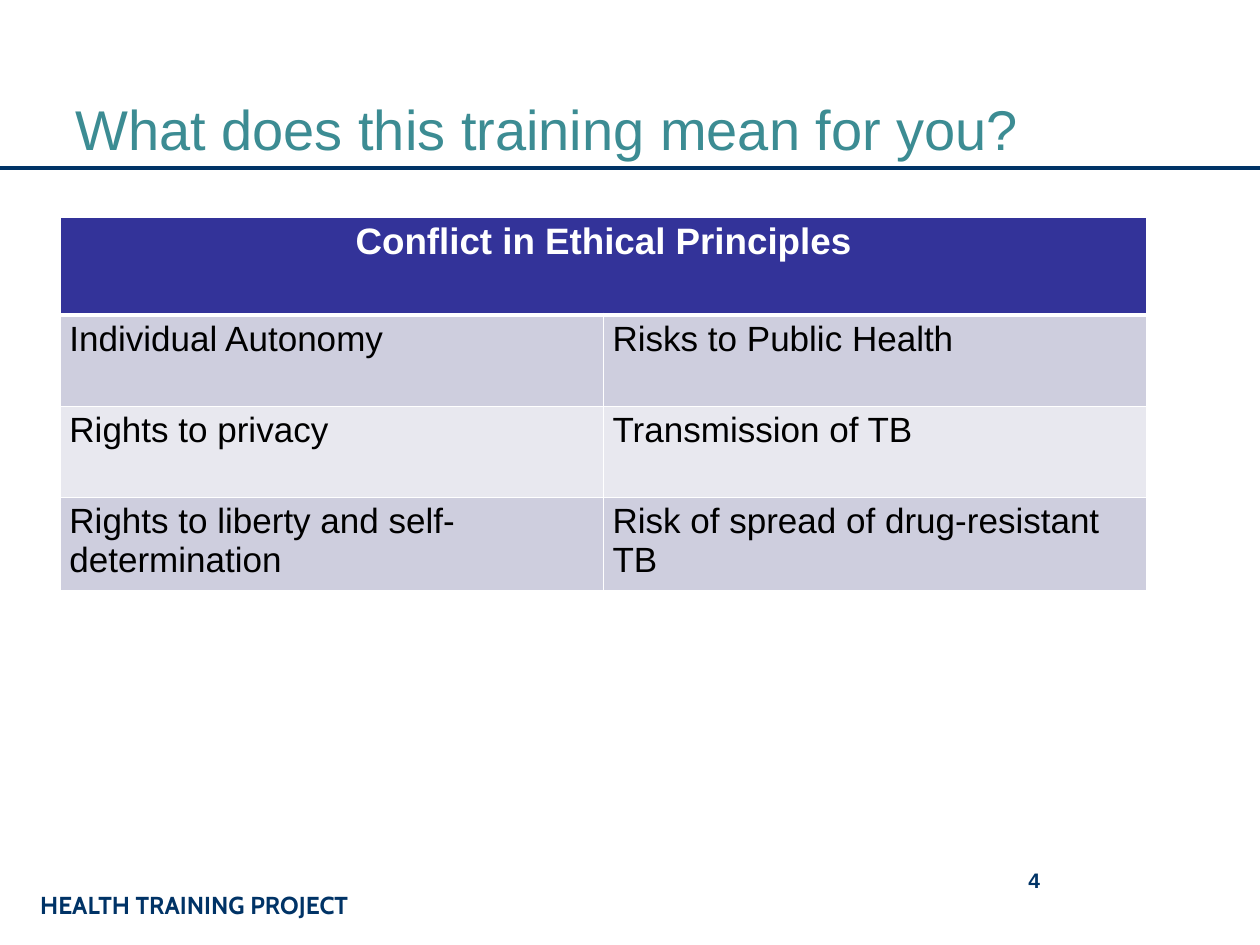
import pptx
import pptx.dml.color
import pptx.enum.shapes
import pptx.enum.text
import pptx.oxml
import pptx.oxml.ns
import pptx.util
from lxml import etree

Cm = pptx.util.Cm
Pt = pptx.util.Pt
Align = pptx.enum.text.PP_ALIGN
Anchor = pptx.enum.text.MSO_ANCHOR

NAVY = "003366"
TEAL = "3C8C93"
INDIGO = "333399"
BANDS = ("CECEDE", "E8E8EF")
WHITE = "FFFFFF"
BLACK = "000000"


def color(code):
    return pptx.dml.color.RGBColor.from_string(code)


def write(frame, text, size=20, font="Arial", tint=BLACK, bold=False,
          align=Align.LEFT):
    para = frame.paragraphs[0]
    para.alignment = align
    run = para.add_run()
    run.text = text
    run.font.size = Pt(size)
    run.font.name = font
    run.font.bold = bold
    run.font.color.rgb = color(tint)


def border(cell, base):
    props = cell._tc.get_or_add_tcPr()
    for side, width in (("L", 1), ("R", 1), ("T", 1), ("B", base)):
        line = etree.SubElement(props, pptx.oxml.ns.qn("a:ln" + side),
                                w=str(Pt(width)))
        fill = etree.SubElement(line, pptx.oxml.ns.qn("a:solidFill"))
        etree.SubElement(fill, pptx.oxml.ns.qn("a:srgbClr"), val=WHITE)


class Deck:
    def __init__(self):
        self.file = pptx.Presentation()
        self.file.slide_width = Cm(25.4)
        self.file.slide_height = Cm(19.05)
        self.slide = self.file.slides.add_slide(self.file.slide_layouts[6])

    def rule(self, top, tint, width):
        line = self.slide.shapes.add_connector(
            pptx.enum.shapes.MSO_CONNECTOR.STRAIGHT,
            Cm(0), Cm(top), self.file.slide_width, Cm(top))
        line.line.color.rgb = color(tint)
        line.line.width = Pt(width)
        etree.SubElement(line._element.spPr, pptx.oxml.ns.qn("a:effectLst"))

    def text(self, text, left, top, width, height, anchor=Anchor.TOP, **style):
        box = self.slide.shapes.add_textbox(
            Cm(left), Cm(top), Cm(width), Cm(height))
        frame = box.text_frame
        frame.word_wrap = True
        frame.vertical_anchor = anchor
        write(frame, text, **style)

    def cell(self, cell, text, fill, base=1, **style):
        cell.margin_left = cell.margin_right = Cm(0.18)
        cell.margin_top = cell.margin_bottom = Cm(0.09)
        border(cell, base)
        cell.fill.solid()
        cell.fill.fore_color.rgb = color(fill)
        write(cell.text_frame, text, **style)

    def table(self, head, rows, left, top, width, tall, high):
        count = len(rows[0])
        grid = self.slide.shapes.add_table(
            len(rows) + 1, count, Cm(left), Cm(top), Cm(width),
            Cm(tall + high * len(rows))).table
        for col in grid.columns:
            col.width = Cm(width / count)
        for row in grid.rows:
            row.height = Cm(high)
        grid.rows[0].height = Cm(tall)
        grid.cell(0, 0).merge(grid.cell(0, count - 1))
        self.cell(grid.cell(0, 0), head, INDIGO, base=3, size=21,
                  tint=WHITE, bold=True, align=Align.CENTER)
        for r, row in enumerate(rows):
            for c, text in enumerate(row):
                self.cell(grid.cell(r + 1, c), text, BANDS[r % 2])


def main():
    deck = Deck()
    deck.rule(3.38, NAVY, 2.25)
    deck.text("HEALTH TRAINING PROJECT", 0.56, 17.82, 8.46, 0.84,
              size=14, font="Cabin", tint=NAVY, bold=True)
    deck.text("What does this training mean for you?", 1.27, 0.64, 22.86, 2.74,
              anchor=Anchor.BOTTOM, size=32, tint=TEAL)
    deck.table("Conflict in Ethical Principles", [
        ("Individual Autonomy", "Risks to Public Health"),
        ("Rights to privacy", "Transmission of TB"),
        ("Rights to liberty and self-determination",
         "Risk of spread of drug-resistant TB"),
    ], 1.22, 4.38, 21.9, 1.97, 1.84)
    deck.text("4", 18.21, 17.36, 5.28, 1.27,
              size=12, tint=NAVY, bold=True, align=Align.CENTER)
    deck.file.save("out.pptx")


if __name__ == "__main__":
    main()
